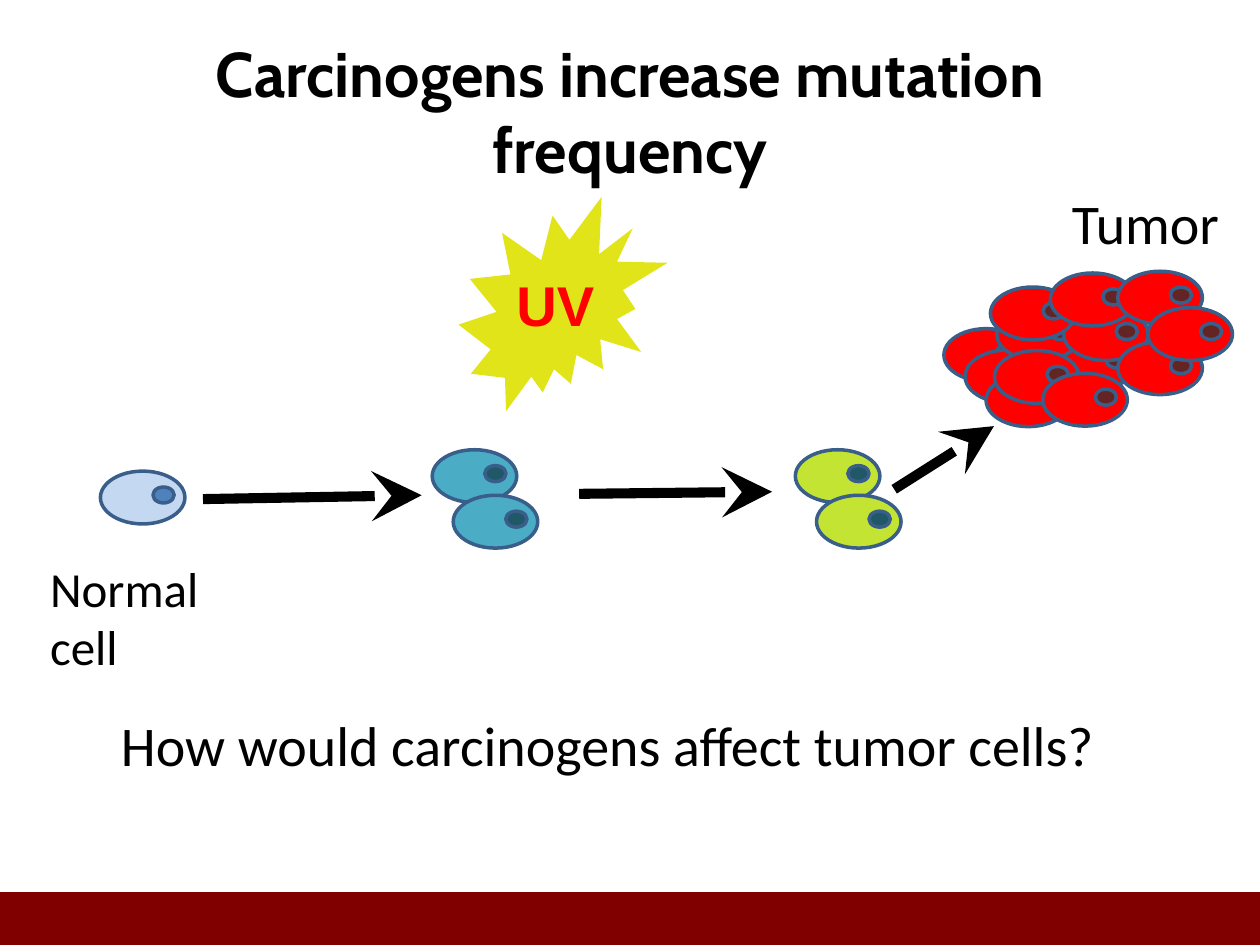
from lxml import etree
from pptx import Presentation
from pptx.dml.color import RGBColor
from pptx.enum.shapes import MSO_CONNECTOR, MSO_SHAPE
from pptx.enum.text import MSO_ANCHOR, PP_ALIGN
from pptx.oxml.ns import qn
from pptx.util import Pt

COLORS = {
    "black": "000000", "maroon": "800000", "outline": "395E8A",
    "normal": "C5D8F1", "normal nucleus": "4F81BD",
    "mutant": "4BACC6", "nucleus": "205867", "second mutant": "C3E432",
    "red": "FF0000", "tumor nucleus": "632423", "burst": "E2E41A",
}


def add_filled(kind, left, top, width, height, fill, outline=None):
    """Add a preset shape without shadow, outlined only if a colour is named."""
    shape = page.shapes.add_shape(kind, Pt(left), Pt(top), Pt(width), Pt(height))
    shape.shadow.inherit = False
    shape.fill.solid()
    shape.fill.fore_color.rgb = RGBColor.from_string(COLORS[fill])
    if outline:
        shape.line.color.rgb = RGBColor.from_string(COLORS[outline])
        shape.line.width = Pt(2)
    else:
        shape.line.fill.background()


def add_label(lines, left, top, width, height, size, font="Calibri", color="black",
              bold=False, align=PP_ALIGN.LEFT, anchor=MSO_ANCHOR.TOP, wrap=True):
    box = page.shapes.add_textbox(Pt(left), Pt(top), Pt(width), Pt(height))
    frame = box.text_frame
    frame.word_wrap = wrap
    frame.vertical_anchor = anchor
    for index, line in enumerate(lines):
        para = frame.add_paragraph() if index else frame.paragraphs[0]
        para.alignment = align
        span = para.add_run()
        span.text = line
        span.font.name = font
        span.font.size = Pt(size)
        span.font.bold = bold
        span.font.color.rgb = RGBColor.from_string(COLORS[color])


deck = Presentation()
deck.slide_width, deck.slide_height = Pt(720), Pt(540)
page = deck.slides.add_slide(deck.slide_layouts[6])

add_filled(MSO_SHAPE.RECTANGLE, 0, 509.8, 720, 30.2, "maroon")

# Cells from back to front: body colour, nucleus colour, top left corners
cell_groups = [
    ("normal", "normal nucleus", [(57.4, 269.2)]),
    ("mutant", "nucleus", [(247, 257), (259, 283)]),
    ("red", "tumor nucleus", [
        (602, 192), (539.4, 187.8), (551.5, 200), (563.5, 213.6), (569.6, 175.8),
        (607.8, 175.8), (566, 164), (600.2, 156), (638.8, 195.3), (638.8, 155),
        (656, 175.8), (568.3, 200.3), (595.9, 213.3)]),
    ("second mutant", "nucleus", [(454.5, 257), (466.6, 283)]),
]
for body, nucleus, corners in cell_groups:
    for left, top in corners:
        add_filled(MSO_SHAPE.OVAL, left, top, 48.3, 30.2, body, "outline")
        add_filled(MSO_SHAPE.OVAL, left + 30, top + 9.1, 12.1, 9.1, nucleus, "outline")

arrows = [(116, 285.2, 241, 283), (331, 282.2, 441.2, 281), (511, 279.6, 568, 243.5)]
for ends in arrows:
    arrow = page.shapes.add_connector(MSO_CONNECTOR.STRAIGHT, *map(Pt, ends))
    arrow.line.color.rgb = RGBColor.from_string(COLORS["black"])
    arrow.line.width = Pt(5.75)
    etree.SubElement(arrow.line._get_or_add_ln(), qn("a:tailEnd"),
                     type="stealth", w="lg", len="lg")
    etree.SubElement(arrow._element.spPr, qn("a:effectLst"))

add_label(["Carcinogens increase mutation frequency"], 36, 18, 648, 90, 36, "Cabin",
          bold=True, align=PP_ALIGN.CENTER, anchor=MSO_ANCHOR.MIDDLE)
add_filled(MSO_SHAPE.EXPLOSION2, 262, 112.5, 119.5, 122.5, "burst")
add_label(["UV"], 288, 151.2, 79.2, 17.3, 32, "Arial", "red", bold=True)
add_label(["How would carcinogens affect tumor cells?"], 62, 402.5, 586.8, 60.5, 32)
add_label(["Tumor"], 605.5, 104.4, 103, 46, 32, wrap=False)
add_label(["Normal", "cell"], 21.6, 315.4, 100, 75, 28, wrap=False)

deck.save("out.pptx")
